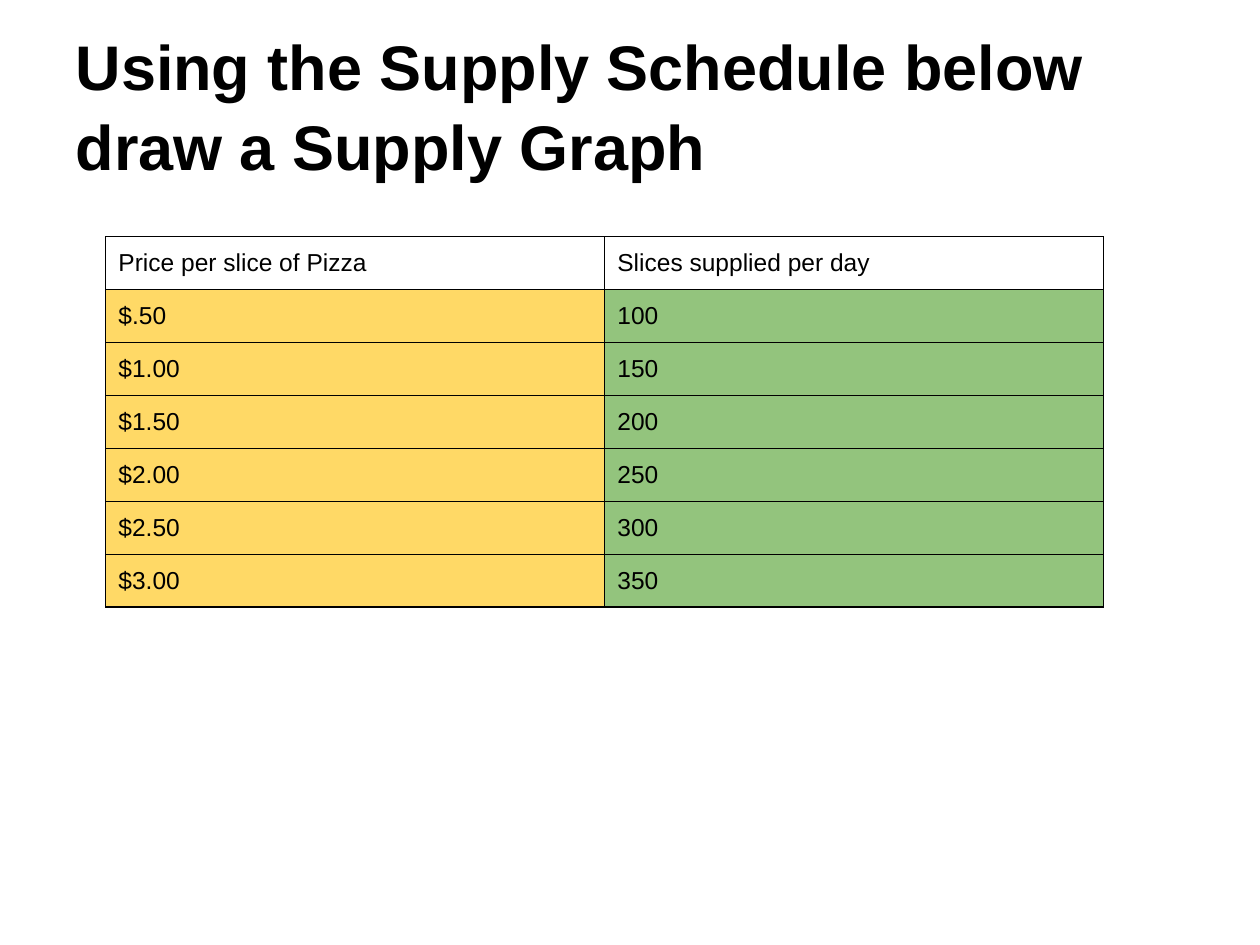
"""Builds a slide with a pizza supply schedule."""
import dataclasses

import lxml.etree
import pptx
import pptx.dml.color
import pptx.enum.text
import pptx.oxml.ns
import pptx.util


@dataclasses.dataclass(frozen=True)
class Theme:
    font: str = "Arial"
    ink: str = "000000"
    price: str = "FFD966"
    supply: str = "93C47D"
    head: int = 36
    body: int = 14
    rule: float = 0.75
    inset: int = 10


class Page:
    scale = 9144

    def __init__(self, theme, wide, high):
        self.theme = theme
        self.deck = pptx.Presentation()
        self.deck.slide_width = self.px(wide)
        self.deck.slide_height = self.px(high)
        self.slide = self.deck.slides.add_slide(self.deck.slide_layouts[5])

    def px(self, size):
        return pptx.util.Emu(size * self.scale)

    def color(self, code):
        return pptx.dml.color.RGBColor.from_string(code)

    def pad(self, box):
        inset = self.px(self.theme.inset)
        box.margin_left = box.margin_right = inset
        box.margin_top = box.margin_bottom = inset

    def label(self, frame, text, size, bold=False):
        frame.text = text
        para = frame.paragraphs[0]
        para.alignment = pptx.enum.text.PP_ALIGN.LEFT
        font = para.font
        font.name = self.theme.font
        font.size = pptx.util.Pt(size)
        font.bold = bold
        font.color.rgb = self.color(self.theme.ink)
        return para

    def title(self, text, left, top, wide, high):
        shape = self.slide.shapes.title
        shape.left, shape.top = self.px(left), self.px(top)
        shape.width, shape.height = self.px(wide), self.px(high)
        frame = shape.text_frame
        self.pad(frame)
        frame.word_wrap = True
        frame.auto_size = pptx.enum.text.MSO_AUTO_SIZE.NONE
        frame.vertical_anchor = pptx.enum.text.MSO_ANCHOR.BOTTOM
        self.label(frame, text, self.theme.head, True).line_spacing = 1.05

    def border(self, cell):
        name = pptx.oxml.ns.qn
        props = cell._tc.get_or_add_tcPr()
        width = str(int(pptx.util.Pt(self.theme.rule)))
        for spot, side in enumerate(("a:lnL", "a:lnR", "a:lnT", "a:lnB")):
            line = lxml.etree.Element(name(side), w=width)
            fill = lxml.etree.SubElement(line, name("a:solidFill"))
            lxml.etree.SubElement(fill, name("a:srgbClr"), val=self.theme.ink)
            props.insert(spot, line)

    def table(self, rows, fills, left, top, wide, high):
        grid = self.slide.shapes.add_table(
            len(rows), len(fills), self.px(left), self.px(top),
            self.px(wide * len(fills)), self.px(high * len(rows))).table
        grid.first_row = grid.horz_banding = False
        for r, row in enumerate(rows):
            for c, text in enumerate(row):
                cell = grid.cell(r, c)
                self.pad(cell)
                self.label(cell.text_frame, text, self.theme.body)
                if r:
                    cell.fill.solid()
                    cell.fill.fore_color.rgb = self.color(fills[c])
                else:
                    cell.fill.background()
                self.border(cell)


def main():
    theme = Theme()
    page = Page(theme, 1000, 750)
    page.title("Using the Supply Schedule below draw a Supply Graph", 50, 30, 900, 125)
    rows = [
        ("Price per slice of Pizza", "Slices supplied per day"),
        ("$.50", "100"),
        ("$1.00", "150"),
        ("$1.50", "200"),
        ("$2.00", "250"),
        ("$2.50", "300"),
        ("$3.00", "350"),
    ]
    page.table(rows, (theme.price, theme.supply), 84, 188, 396, 42)
    page.deck.save("out.pptx")


if __name__ == "__main__":
    main()
